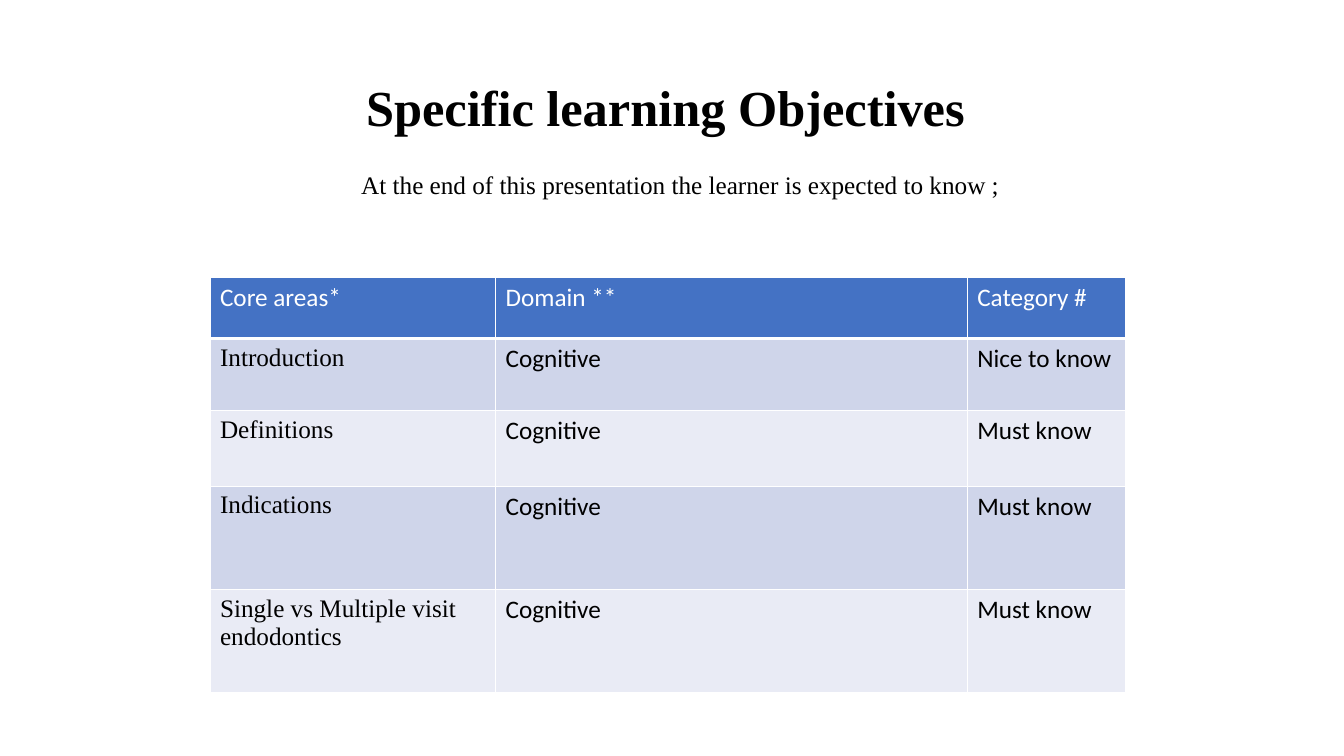
from lxml import etree
from pptx import Presentation
from pptx import util as u
from pptx.dml.color import RGBColor
from pptx.enum import text
from pptx.oxml import ns

BLACK = RGBColor(0x00, 0x00, 0x00)
WHITE = RGBColor(0xFF, 0xFF, 0xFF)
HEADER = RGBColor(0x44, 0x72, 0xC4)
BANDS = (RGBColor(0xCF, 0xD5, 0xEA), RGBColor(0xE9, 0xEB, 0xF5))
SERIF, SANS = "Times New Roman", "Calibri"

COLS, ROWS = 160, 90  # grid on a 13.33 x 7.5 inch slide


def write(tf, words, font=SERIF, size=18, color=BLACK, bold=False,
          align=None, spacing=None, before=None):
    p = tf.paragraphs[0]
    p.alignment = align
    p.line_spacing = spacing
    p.space_before = before
    r = p.add_run()
    r.text = words
    r.font.name, r.font.size, r.font.bold = font, u.Pt(size), bold
    r.font.color.rgb = color


def border(cell, bottom=1):
    """Draw the four cell edges; they precede the fill in tcPr."""
    pr = cell._tc.get_or_add_tcPr()
    widths = {"lnL": 1, "lnR": 1, "lnT": 1, "lnB": bottom}
    for i, (edge, width) in enumerate(widths.items()):
        ln = etree.Element(ns.qn(f"a:{edge}"), w=str(u.Pt(width)))
        fill = etree.SubElement(ln, ns.qn("a:solidFill"))
        etree.SubElement(fill, ns.qn("a:srgbClr"), val=str(WHITE))
        pr.insert(i, ln)


class Slide:
    def __init__(self, prs):
        self.s = prs.slides.add_slide(prs.slide_layouts[0])
        self.dx = prs.slide_width / COLS
        self.dy = prs.slide_height / ROWS

    def box(self, x, y, w, h):
        return (round(x * self.dx), round(y * self.dy),
                round(w * self.dx), round(h * self.dy))

    def placeholder(self, idx, words, place, anchor, **style):
        sp = self.s.placeholders[idx]
        sp.left, sp.top, sp.width, sp.height = self.box(*place)
        tf = sp.text_frame
        tf.word_wrap = True
        tf.auto_size = text.MSO_AUTO_SIZE.NONE
        tf.vertical_anchor = anchor
        write(tf, words, align=text.PP_ALIGN.CENTER, spacing=0.9, **style)

    def table(self, x, y, widths, heights, rows):
        place = self.box(x, y, sum(widths), sum(heights))
        tbl = self.s.shapes.add_table(len(rows), len(widths), *place).table
        for col, w in zip(tbl.columns, widths):
            col.width = round(w * self.dx)
        for row, h in zip(tbl.rows, heights):
            row.height = round(h * self.dy)
        for i, row in enumerate(rows):
            head = i == 0
            for j, words in enumerate(row):
                cell = tbl.cell(i, j)
                cell.fill.solid()
                cell.fill.fore_color.rgb = HEADER if head else BANDS[(i - 1) % 2]
                border(cell, bottom=3 if head else 1)
                write(cell.text_frame, words,
                      font=SANS if head or j else SERIF,
                      color=WHITE if head else BLACK)


def main():
    prs = Presentation()
    prs.slide_width, prs.slide_height = u.Inches(13.33), u.Inches(7.5)
    slide = Slide(prs)

    # Heading and lead-in
    slide.placeholder(0, "Specific learning Objectives ", (29, 5, 102, 12),
                      text.MSO_ANCHOR.BOTTOM, size=36, bold=True)
    slide.placeholder(
        1, "At the end of this presentation the learner is expected to know ;",
        (29, 20, 104, 62), text.MSO_ANCHOR.TOP, before=u.Pt(10))

    # Objectives table
    slide.table(25, 33, (34, 56.15, 18.85), (7.3, 8.6, 9, 12.3, 12.3), [
        ("Core areas*", "Domain **", "Category #"),
        ("Introduction", "Cognitive", "Nice to know"),
        ("Definitions", "Cognitive", "Must know"),
        ("Indications", "Cognitive", "Must know"),
        ("Single vs Multiple visit endodontics", "Cognitive", "Must know"),
    ])
    prs.save("out.pptx")


if __name__ == "__main__":
    main()
